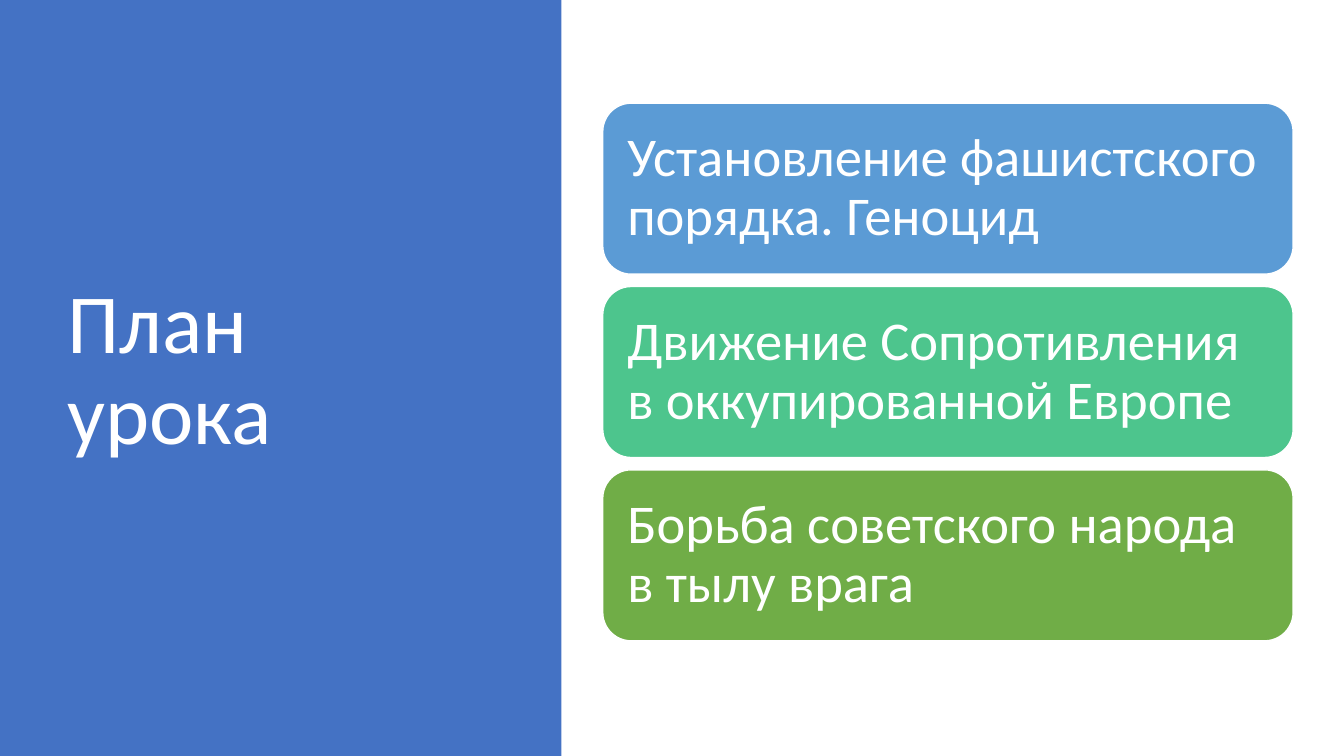
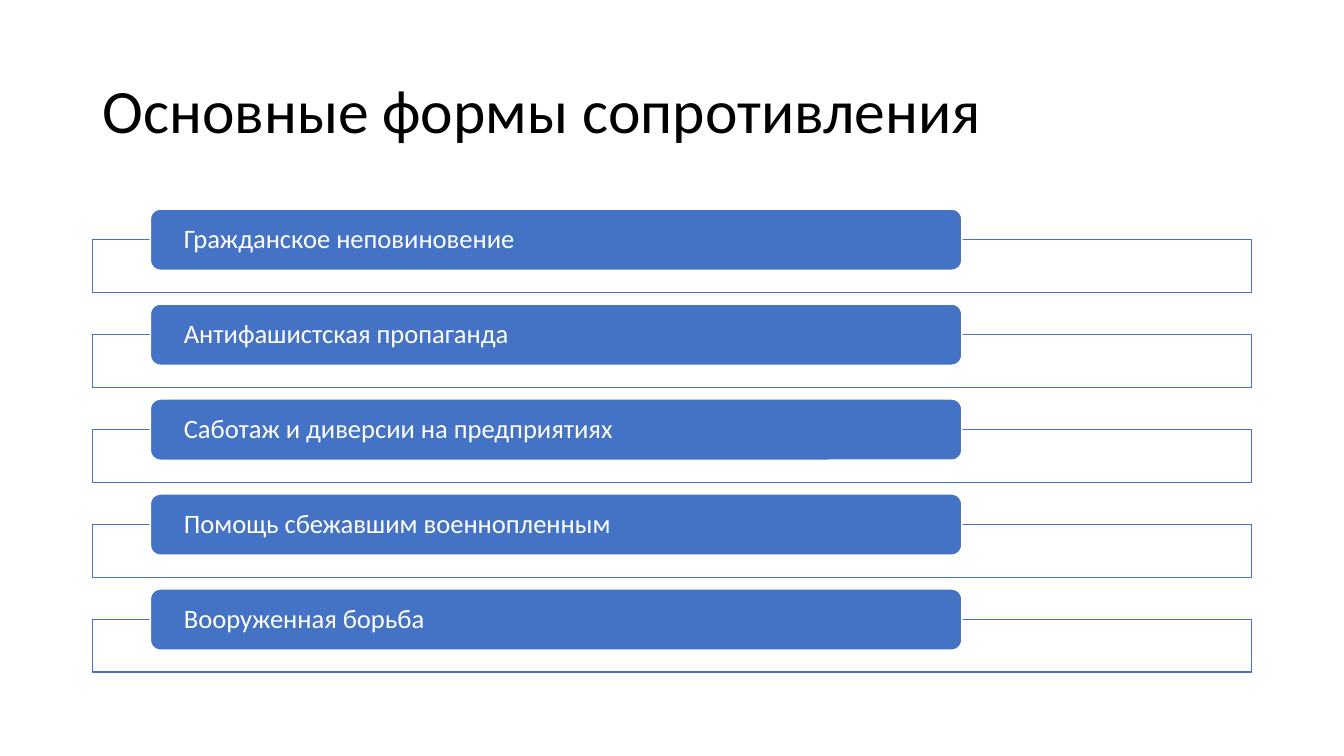
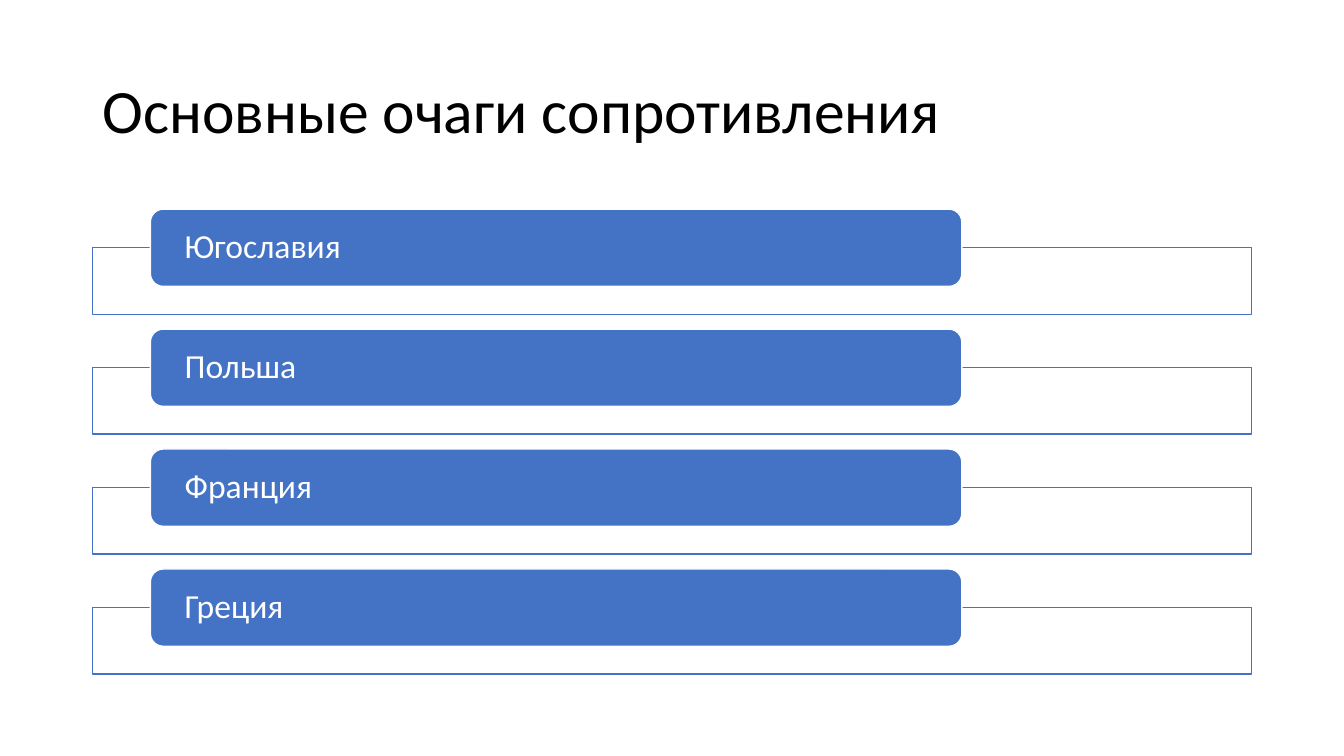
import pptx
import pptx.util
import pptx.dml.color
import pptx.enum.shapes
import pptx.enum.text
import pptx.oxml.ns
import lxml.etree

Cm, Pt = pptx.util.Cm, pptx.util.Pt
RGB = pptx.dml.color.RGBColor.from_string
SHAPE = pptx.enum.shapes.MSO_SHAPE
TEXT = pptx.enum.text

# Content
PLAN = {
    "title": "План урока",
    "cards": [
        ("Установление фашистского порядка. Геноцид", "sky"),
        ("Движение Сопротивления в оккупированной Европе", "mint"),
        ("Борьба советского народа в тылу врага", "green"),
    ],
}
LISTS = [
    {
        "title": "Основные формы сопротивления",
        "size": 19,
        "items": [
            "Гражданское неповиновение",
            "Антифашистская пропаганда",
            "Саботаж и диверсии на предприятиях",
            "Помощь сбежавшим военнопленным",
            "Вооруженная борьба",
        ],
    },
    {
        "title": "Основные очаги сопротивления",
        "size": 24,
        "items": ["Югославия", "Польша", "Франция", "Греция"],
    },
]


# Theme
class Theme:
    font = "Calibri"
    white, black = RGB("FFFFFF"), RGB("000000")
    blue, sky = RGB("4472C4"), RGB("5B9BD5")
    mint, green = RGB("4DC58D"), RGB("70AD47")
    cover_title, title, card = 60, 44, 39
    line = Pt(1)


# Shared parts
def format_text(shape, text, size, color):
    tf = shape.text_frame
    tf.text = text
    tf.word_wrap = True
    tf.auto_size = TEXT.MSO_AUTO_SIZE.NONE
    tf.vertical_anchor = TEXT.MSO_ANCHOR.MIDDLE
    p = tf.paragraphs[0]
    p.alignment = TEXT.PP_ALIGN.LEFT
    p.line_spacing = 0.9
    font = p.runs[0].font
    font.name, font.size, font.color.rgb = Theme.font, Pt(size), color


def add_slide(prs, title, box, size, color):
    s = prs.slides.add_slide(prs.slide_layouts[5])
    sp = s.shapes.title
    sp.left, sp.top, sp.width, sp.height = box
    format_text(sp, title, size, color)
    return s


def add_box(s, kind, box, fill, line=None):
    sp = s.shapes.add_shape(kind, *box)
    sp.shadow.inherit = False
    sp.fill.solid()
    sp.fill.fore_color.rgb = fill
    if line is None:
        sp.line.fill.background()
    else:
        sp.line.color.rgb = line
        sp.line.width = Theme.line
    return sp


def add_label(s, box, fill, text, size, inset_x, inset_y):
    sp = add_box(s, SHAPE.ROUNDED_RECTANGLE, box, fill, Theme.white)
    tf = sp.text_frame
    tf.margin_left = tf.margin_right = inset_x
    tf.margin_top = tf.margin_bottom = inset_y
    format_text(sp, text, size, Theme.white)


def set_opacity(sp, percent):
    color = sp.fill._xPr.find(".//" + pptx.oxml.ns.qn("a:srgbClr"))
    alpha = lxml.etree.SubElement(color, pptx.oxml.ns.qn("a:alpha"))
    alpha.set("val", str(percent * 1000))


# Slide kinds
def build_plan(prs, plan):
    title_box = Cm(1.45), Cm(1.73), Cm(10.57), Cm(15.29)
    s = add_slide(prs, plan["title"], title_box, Theme.cover_title, Theme.white)
    panel = add_box(s, SHAPE.RECTANGLE, (0, 0, Cm(14.15), prs.slide_height), Theme.blue)
    s.shapes._spTree.insert(2, panel._element)  # behind the title

    top, height, gap = Cm(2.6), Cm(4.31), Cm(0.31)
    for i, (text, color) in enumerate(plan["cards"]):
        box = Cm(15.19), top + i * (height + gap), Cm(17.4), height
        add_label(s, box, getattr(Theme, color), text, Theme.card, Cm(0.41), Cm(0.41))


def build_list(prs, content):
    left, width = Cm(2.33), Cm(29.21)
    title_box = left, Cm(1.01), width, Cm(3.68)
    s = add_slide(prs, content["title"], title_box, Theme.title, Theme.black)

    # Row heights grow with the type size
    size = content["size"]
    bar_h, frame_h, pitch = (int(Pt(size) * k) for k in (2.3, 1.98, 3.57))
    for i, text in enumerate(content["items"]):
        y = Cm(5.27) + i * pitch
        frame_box = left, y + bar_h // 2, width, frame_h
        frame = add_box(s, SHAPE.RECTANGLE, frame_box, Theme.white, Theme.blue)
        set_opacity(frame, 90)
        bar_box = Cm(3.79), y, Cm(20.45), bar_h
        add_label(s, bar_box, Theme.blue, text, size, Cm(0.77), 0)


def main():
    prs = pptx.Presentation()
    prs.slide_width, prs.slide_height = Cm(33.87), Cm(19.05)
    build_plan(prs, PLAN)
    for content in LISTS:
        build_list(prs, content)
    prs.save("out.pptx")


if __name__ == "__main__":
    main()
